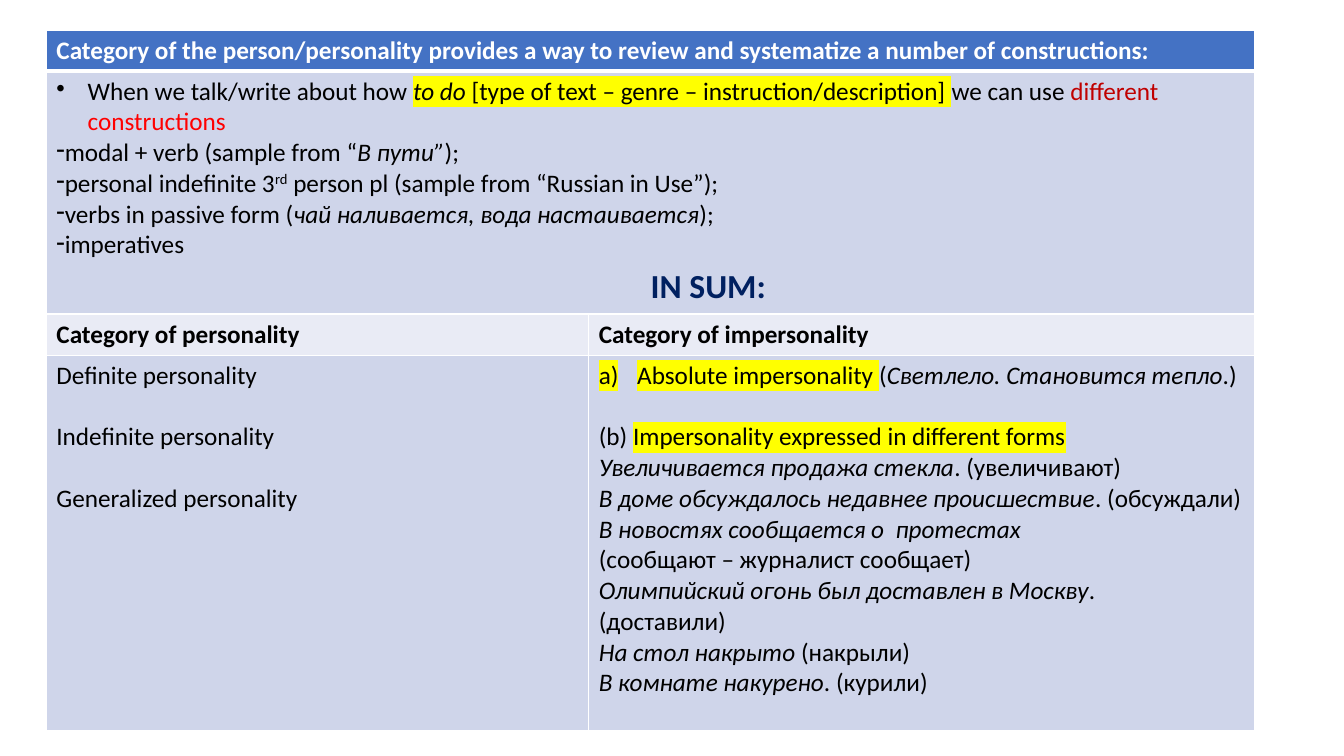
from lxml import etree
from pptx import Presentation
from pptx.dml.color import RGBColor
from pptx.enum.text import PP_ALIGN
from pptx.oxml.ns import qn
from pptx.util import Inches, Pt

CENTER = PP_ALIGN.CENTER
BLACK, WHITE, NAVY, YELLOW = "000000", "FFFFFF", "002060", "FFFF00"
HEADER, BAND, LIGHT_BAND = "4472C4", "CFD5EA", "E9EBF5"
BLANK_LINE = 22

BOLD = {"bold": True}
ITALIC = {"italic": True}
MARKED = {"highlight": YELLOW}
DASH = {"bullet": "-"}
LETTERED = {"number": "alphaLcParenR", "indent": 0.38}
AFTER_GAP = {"before": BLANK_LINE}


def colour(code):
    return RGBColor.from_string(code)


def paragraph(*spans, **settings):
    """Pair spans, each a string or (string, style), with paragraph settings."""
    pairs = [(span, {}) if isinstance(span, str) else span for span in spans]
    return pairs, settings


class SlideBuilder:
    font, size = "Calibri", 18

    def __init__(self, deck):
        self.deck = deck
        self.page = deck.slides.add_slide(deck.slide_layouts[6])

    def table(self, left, top, columns, rows):
        """Add a table; all lengths are shares of the slide's size."""
        width, height = self.deck.slide_width, self.deck.slide_height
        frame = self.page.shapes.add_table(
            len(rows), len(columns), int(left * width), int(top * height),
            int(sum(columns) * width), int(sum(rows) * height))
        table = frame.table
        for column, share in zip(table.columns, columns):
            column.width = int(share * width)
        for row, share in zip(table.rows, rows):
            row.height = int(share * height)
        return table

    def borders(self, cell, **widths):
        properties = cell._tc.get_or_add_tcPr()
        for side in ("L", "R", "T", "B"):
            line = etree.SubElement(properties, qn("a:ln" + side),
                                    w=str(Pt(widths.get(side, 1))))
            fill = etree.SubElement(line, qn("a:solidFill"))
            etree.SubElement(fill, qn("a:srgbClr"), val=WHITE)

    def fill(self, cell, code):
        cell.fill.solid()
        cell.fill.fore_color.rgb = colour(code)

    def cell_text(self, cell, paragraphs):
        frame = cell.text_frame
        for index, (spans, settings) in enumerate(paragraphs):
            para = frame.paragraphs[0] if index == 0 else frame.add_paragraph()
            self.layout(para, **settings)
            for text, style in spans:
                self.span(para, text, **style)

    def layout(self, para, bullet=None, number=None, indent=0, margin=0,
               before=0, align=None):
        properties = para._p.get_or_add_pPr()
        properties.set("marL", str(Inches(margin or indent)))
        properties.set("indent", str(-Inches(indent)))
        if bullet:
            etree.SubElement(properties, qn("a:buChar"), char=bullet)
        elif number:
            etree.SubElement(properties, qn("a:buAutoNum"), type=number)
        else:
            etree.SubElement(properties, qn("a:buNone"))
        if before:
            para.space_before = Pt(before)
        if align is not None:
            para.alignment = align

    def span(self, para, text, size=None, color=BLACK, bold=False,
             italic=False, highlight=None, raised=False):
        run = para.add_run()
        run.text = text
        font = run.font
        font.size = Pt(size or self.size)
        font.bold, font.italic = bold, italic
        font.color.rgb = colour(color)
        properties = run._r.get_or_add_rPr()
        if highlight:
            mark = etree.SubElement(properties, qn("a:highlight"))
            etree.SubElement(mark, qn("a:srgbClr"), val=highlight)
        if raised:
            properties.set("baseline", "30000")
        font.name = self.font


TITLE = [paragraph(
    ("Category of the person/personality provides a way to review and "
     "systematize a number of constructions:", {"color": WHITE, **BOLD}))]

CONSTRUCTIONS = [
    paragraph("When we talk/write about how ",
              ("to do ", ITALIC | MARKED),
              ("[type of text – genre – instruction/description]", MARKED),
              (" ", ITALIC | MARKED),
              "we can use ",
              ("different ", {"color": "C00000"}),
              ("constructions", {"color": "FF0000"}),
              bullet="•", indent=0.31),
    paragraph("modal + verb (sample from “", ("В пути”", ITALIC), ");", **DASH),
    paragraph("personal indefinite 3", ("rd", {"raised": True}),
              " person pl (sample from “Russian in Use”);", **DASH),
    paragraph("verbs in passive form (",
              ("чай наливается, вода настаивается", ITALIC), ");", **DASH),
    paragraph("imperatives", **DASH),
    paragraph(("IN SUM:", {"size": 24, "color": NAVY, **BOLD}),
              align=CENTER, margin=1.15, before=4),
]

PERSONALITY = [
    paragraph("Definite personality"),
    paragraph("Indefinite personality", **AFTER_GAP),
    paragraph("Generalized personality", **AFTER_GAP),
]

IMPERSONALITY = [
    paragraph(("Absolute impersonality ", MARKED), "(",
              ("Светлело. Становится тепло", ITALIC), ".)", **LETTERED),
    paragraph("(b) ", ("Impersonality expressed in different forms", MARKED),
              **AFTER_GAP),
    paragraph(("Увеличивается продажа стекла", ITALIC), ". (увеличивают)"),
    paragraph(("В доме обсуждалось недавнее происшествие", ITALIC),
              ". (обсуждали)"),
    paragraph(("В новостях сообщается о  протестах", ITALIC)),
    paragraph("(сообщают – журналист сообщает)"),
    paragraph(("Олимпийский огонь был доставлен в Москву", ITALIC), "."),
    paragraph("(доставили)"),
    paragraph(("На стол накрыто ", ITALIC), "(накрыли)"),
    paragraph(("В комнате накурено", ITALIC), ". (курили)"),
]

# Each row: height in inches, fill, contents of its cells
ROWS = [
    (0.4, HEADER, [TITLE]),
    (2.41, BAND, [CONSTRUCTIONS]),
    (0.41, LIGHT_BAND, [[paragraph(("Category of personality", BOLD))],
                        [paragraph(("Category of impersonality", BOLD))]]),
    (3.72, BAND, [PERSONALITY, IMPERSONALITY]),
]


def main():
    deck = Presentation()
    deck.slide_width, deck.slide_height = Inches(13.33), Inches(7.5)
    builder = SlideBuilder(deck)
    table = builder.table(0.46 / 13.33, 0.3 / 7.5,
                          [5.38 / 13.33, 6.6 / 13.33],
                          [height / 7.5 for height, _, _ in ROWS])
    heavy_sides = {0: {"B": 3}, 1: {"T": 3}}
    for index, (_, band, contents) in enumerate(ROWS):
        cells = [table.cell(index, column) for column in range(2)]
        for cell in cells:
            builder.borders(cell, **heavy_sides.get(index, {}))
            builder.fill(cell, band)
        if len(contents) == 1:
            cells[0].merge(cells[1])
        for cell, paragraphs in zip(cells, contents):
            builder.cell_text(cell, paragraphs)
    deck.save("out.pptx")


if __name__ == "__main__":
    main()
